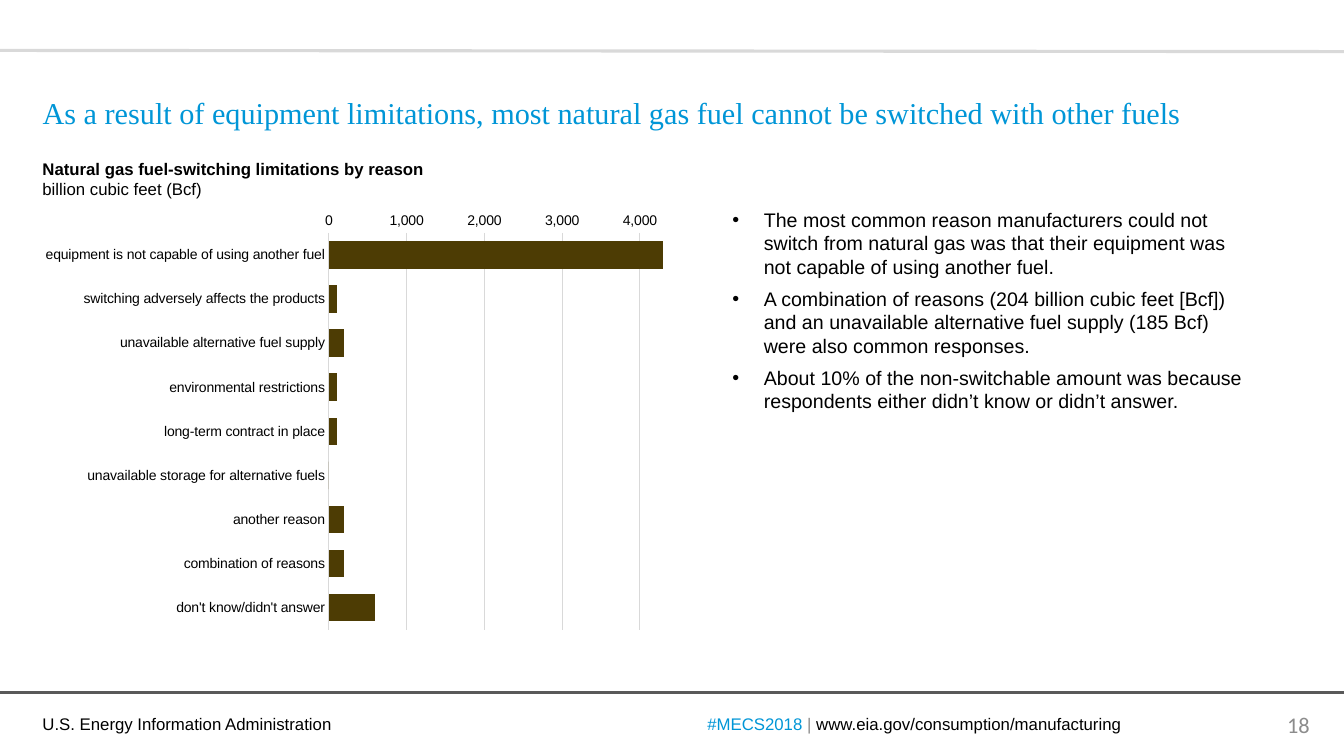
from dataclasses import dataclass

from lxml.etree import SubElement
from pptx import Presentation
from pptx.chart.data import CategoryChartData
from pptx.dml.color import RGBColor
from pptx.enum.chart import XL_CHART_TYPE, XL_TICK_MARK
from pptx.enum.shapes import MSO_CONNECTOR
from pptx.enum.text import MSO_ANCHOR, PP_ALIGN
from pptx.oxml.ns import qn
from pptx.util import Cm, Pt


@dataclass(frozen=True)
class Theme:
    blue: RGBColor = RGBColor(0x00, 0x96, 0xD7)
    black: RGBColor = RGBColor(0, 0, 0)
    gray: RGBColor = RGBColor(0x8C, 0x8C, 0x8C)
    light: RGBColor = RGBColor(0xD9, 0xD9, 0xD9)
    dark: RGBColor = RGBColor(0x59, 0x59, 0x59)
    brown: RGBColor = RGBColor(0x4D, 0x3C, 0x04)
    sans: str = "Arial"
    serif: str = "Times New Roman"
    numeral: str = "Calibri"
    title: float = 21.6
    page: float = 16
    body: float = 14
    label: float = 12
    axis: float = 10


THEME = Theme()
TITLE = "As a result of equipment limitations, most natural gas fuel cannot be switched with other fuels"
REASONS = {
    "equipment is not capable of using another fuel": 4300,
    "switching adversely affects the products": 100,
    "unavailable alternative fuel supply": 200,
    "environmental restrictions": 100,
    "long-term contract in place": 100,
    "unavailable storage for alternative fuels": 0,
    "another reason": 200,
    "combination of reasons": 200,
    "don't know/didn't answer": 600,
}
FINDINGS = [
    "The most common reason manufacturers could not switch from natural gas was that their equipment was not capable of using another fuel.",
    "A combination of reasons (204 billion cubic feet [Bcf]) and an unavailable alternative fuel supply (185 Bcf) were also common responses.",
    "About 10% of the non-switchable amount was because respondents either didn’t know or didn’t answer.",
]
PLOT_AREA = {"x": 0.45, "y": 0.065, "w": 0.53, "h": 0.913}


def style_font(font, size, color=THEME.black, name=THEME.sans, bold=False):
    font.size = Pt(size)
    font.name = name
    font.bold = bold
    font.color.rgb = color


def add_rule(slide, width, start_y, end_y, color):
    rule = slide.shapes.add_connector(
        MSO_CONNECTOR.STRAIGHT, 0, Cm(start_y), width, Cm(end_y))
    rule.line.color.rgb = color
    rule.line.width = Pt(2.25)
    SubElement(rule._element.spPr, qn("a:effectLst"))


def add_text_frame(slide, left, top, width, height, anchor=MSO_ANCHOR.TOP):
    frame = slide.shapes.add_textbox(Cm(left), Cm(top), Cm(width), Cm(height)).text_frame
    frame.word_wrap = True
    frame.vertical_anchor = anchor
    return frame


def add_run(paragraph, text, size, **style):
    run = paragraph.add_run()
    run.text = text
    style_font(run.font, size, **style)


def set_title(slide):
    title = slide.shapes.title
    title.left, title.top, title.width, title.height = Cm(0.82), Cm(1.32), Cm(32.23), Cm(2.1)
    frame = title.text_frame
    frame.text = TITLE
    frame.word_wrap = True
    frame.vertical_anchor = MSO_ANCHOR.BOTTOM
    headline = frame.paragraphs[0]
    headline.alignment = PP_ALIGN.LEFT
    style_font(headline.runs[0].font, THEME.title, THEME.blue, THEME.serif)


def add_chart_heading(slide):
    frame = add_text_frame(slide, 0.82, 3.87, 13.13, 1.27)
    add_run(frame.paragraphs[0], "Natural gas fuel-switching limitations by reason",
            THEME.label, bold=True)
    add_run(frame.add_paragraph(), "billion cubic feet (Bcf)", THEME.label)


def place_plot_area(chart):
    plot_area = chart._chartSpace.chart.plotArea
    for old_layout in plot_area.findall(qn("c:layout")):
        plot_area.remove(old_layout)
    layout = SubElement(plot_area, qn("c:layout"))
    plot_area.insert(0, layout)
    manual = SubElement(layout, qn("c:manualLayout"))
    settings = {"layoutTarget": "inner", "xMode": "edge", "yMode": "edge", **PLOT_AREA}
    for tag, value in settings.items():
        SubElement(manual, qn(f"c:{tag}")).set("val", str(value))


def add_reason_chart(slide):
    reasons = CategoryChartData(number_format="#,##0")
    reasons.categories = list(REASONS)
    reasons.add_series("Series 1", list(REASONS.values()))
    chart = slide.shapes.add_chart(
        XL_CHART_TYPE.BAR_CLUSTERED, Cm(0.8), Cm(5.16), Cm(16.64), Cm(10.95), reasons).chart
    chart.has_legend = False
    chart.has_title = False
    style_font(chart.font, THEME.axis, name=THEME.numeral)

    bars = chart.plots[0]
    bars.gap_width = 60
    bars.vary_by_categories = False
    fill = bars.series[0].format.fill
    fill.solid()
    fill.fore_color.rgb = THEME.brown

    for axis in (chart.category_axis, chart.value_axis):
        axis.major_tick_mark = XL_TICK_MARK.NONE
        axis.minor_tick_mark = XL_TICK_MARK.NONE
        style_font(axis.tick_labels.font, THEME.axis)

    category_axis, value_axis = chart.category_axis, chart.value_axis
    category_axis.reverse_order = True
    value_axis.minimum_scale = 0
    value_axis.maximum_scale = 4500
    value_axis.major_unit = 1000
    value_axis.has_major_gridlines = True
    value_axis.tick_labels.number_format = "#,##0"
    value_axis.tick_labels.number_format_is_linked = False
    value_axis.format.line.fill.background()
    for line in (category_axis.format.line, value_axis.major_gridlines.format.line):
        line.color.rgb = THEME.light
        line.width = Pt(0.75)
    place_plot_area(chart)


def add_findings(slide):
    frame = add_text_frame(slide, 18.21, 5.11, 13.49, 6.27)
    frame.text = "\n".join(FINDINGS)
    for finding in frame.paragraphs:
        finding.space_after = Pt(6)
        properties = finding._p.get_or_add_pPr()
        properties.set("marL", str(Cm(0.79)))
        properties.set("indent", str(-Cm(0.79)))
        SubElement(properties, qn("a:buFont")).set("typeface", THEME.sans)
        SubElement(properties, qn("a:buChar")).set("char", "•")
        style_font(finding.runs[0].font, THEME.body)


def add_footer(slide):
    agency = add_text_frame(slide, 0.82, 17.86, 9.4, 0.76)
    add_run(agency.paragraphs[0], "U.S. Energy Information Administration", THEME.label)

    survey = add_text_frame(slide, 17.33, 17.73, 11.43, 1.02, MSO_ANCHOR.MIDDLE).paragraphs[0]
    survey.alignment = PP_ALIGN.CENTER
    for text, color in (("#MECS2018 ", THEME.blue), ("| ", THEME.gray),
                        ("www.eia.gov/consumption/manufacturing", THEME.black)):
        add_run(survey, text, THEME.label, color=color)

    page = add_text_frame(slide, 31.96, 17.75, 1.52, 1.02, MSO_ANCHOR.MIDDLE).paragraphs[0]
    page.alignment = PP_ALIGN.CENTER
    add_run(page, "18", THEME.page, color=THEME.gray, name=THEME.numeral)


def main():
    presentation = Presentation()
    presentation.slide_width = Cm(33.87)
    presentation.slide_height = Cm(19.05)
    slide = presentation.slides.add_slide(presentation.slide_layouts[5])
    add_rule(slide, presentation.slide_width, 17.45, 17.45, THEME.dark)
    add_rule(slide, presentation.slide_width, 1.27, 1.3, THEME.light)
    set_title(slide)
    add_footer(slide)
    add_reason_chart(slide)
    add_findings(slide)
    add_chart_heading(slide)
    presentation.save("out.pptx")


if __name__ == "__main__":
    main()
